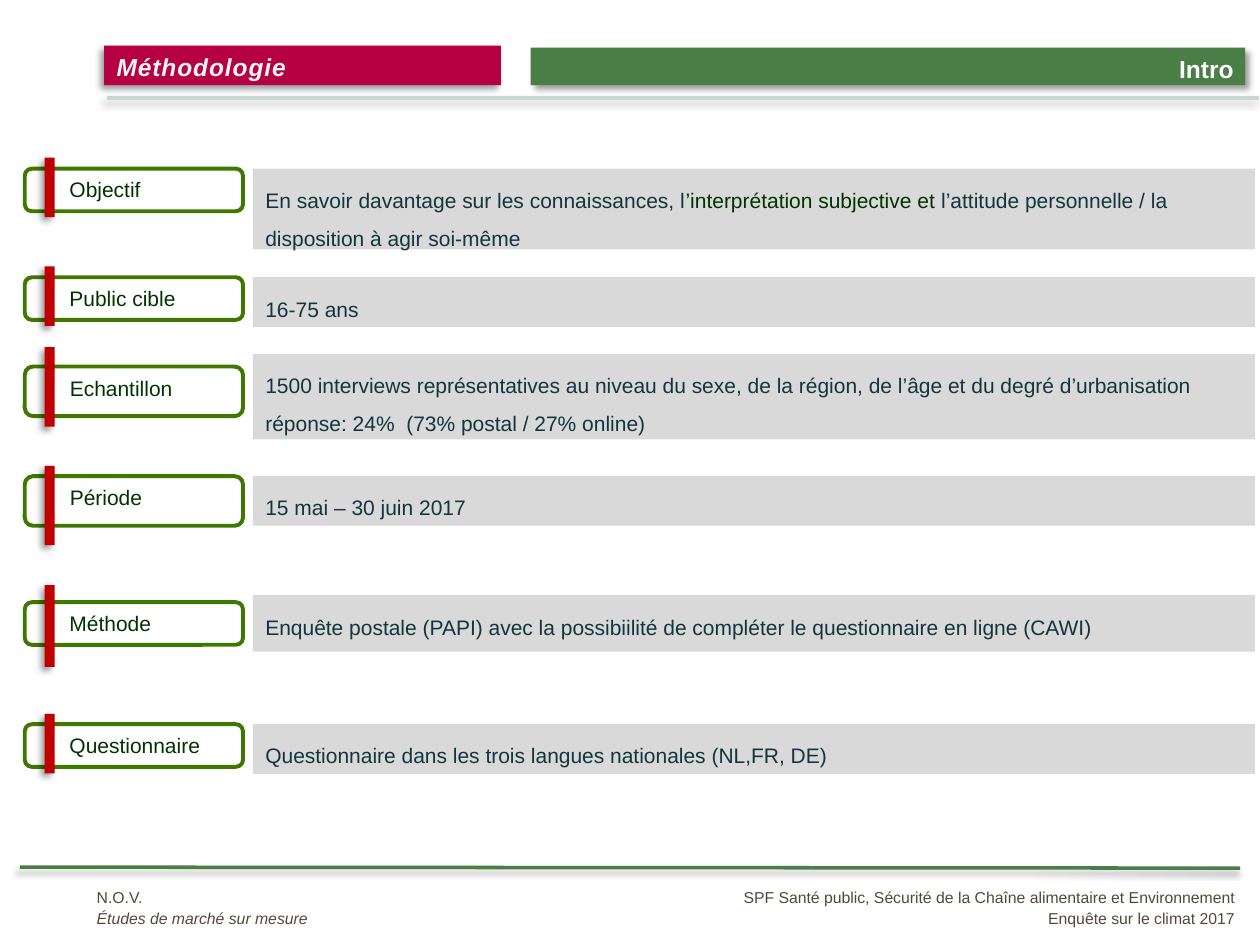
"""Build the methodology slide of a climate survey report."""
from dataclasses import dataclass

from lxml.etree import SubElement
from pptx import Presentation
from pptx.dml.color import RGBColor as RGB
from pptx.enum.shapes import MSO_CONNECTOR as CONN, MSO_SHAPE as SHAPE
from pptx.enum.text import MSO_ANCHOR as ANCHOR, PP_ALIGN as ALIGN
from pptx.oxml.ns import qn
from pptx.util import Cm, Pt


@dataclass(frozen=True)
class Theme:
    font: str = "Arial"
    green: str = "4B7D47"
    pale: str = "CAD6D4"
    crimson: str = "B50042"
    red: str = "C00000"
    border: str = "3E7800"
    grey: str = "D9D9D9"
    white: str = "FFFFFF"
    title: str = "F2F4F3"
    label: str = "003300"
    body: str = "13353D"
    footer: str = "54483A"
    title_size: int = 14
    body_size: int = 12
    footer_size: int = 9


T = Theme()


def finish(s, fill=None, line=None, width=2, angle=None):
    if fill:
        s.fill.solid()
        s.fill.fore_color.rgb = RGB.from_string(fill)
    if line:
        s.line.color.rgb = RGB.from_string(line)
        s.line.width = Pt(width)
    else:
        s.line.fill.background()
    effects = SubElement(s._element.spPr, qn("a:effectLst"))
    if angle:
        shadow = SubElement(effects, qn("a:outerShdw"), blurRad=str(Pt(4)), dist=str(Pt(3)),
                            dir=str(angle * 60000), algn="tl", rotWithShape="0")
        color = SubElement(shadow, qn("a:srgbClr"), val="000000")
        SubElement(color, qn("a:alpha"), val="40000")


def write(s, paragraphs, size, align=ALIGN.LEFT, spacing=1.0, indent=0, bold=False):
    tf = s.text_frame
    tf.word_wrap = True
    tf.vertical_anchor = ANCHOR.TOP
    for i, runs in enumerate(paragraphs):
        p = tf.add_paragraph() if i else tf.paragraphs[0]
        p.alignment = align
        p.line_spacing = spacing
        if indent:
            p._p.get_or_add_pPr().set("marL", str(Cm(indent)))
        for text, color, italic in runs:
            r = p.add_run()
            r.text = text
            r.font.name = T.font
            r.font.size = Pt(size)
            r.font.bold = bold
            r.font.italic = italic
            r.font.color.rgb = RGB.from_string(color)


prs = Presentation()
prs.slide_width, prs.slide_height = Cm(25.4), Cm(19.05)
slide = prs.slides.add_slide(prs.slide_layouts[6])
shapes = slide.shapes

for x1, y1, x2, y2, color in [(0.4, 17.48, 25, 17.5, T.green), (2.16, 1.98, 25.38, 1.98, T.pale)]:
    s = shapes.add_connector(CONN.STRAIGHT, Cm(x1), Cm(y1), Cm(x2), Cm(y2))
    finish(s, line=color, angle=135)

s = shapes.add_shape(SHAPE.RECTANGLE, Cm(10.7), Cm(0.96), Cm(14.4), Cm(0.76))
finish(s, T.green, angle=45)

footers = [
    (11.91, 13.23, ALIGN.RIGHT, False,
     ["SPF Santé public, Sécurité de la Chaîne alimentaire et Environnement",
      "Enquête sur le climat 2017"]),
    (1.7, 7.8, ALIGN.LEFT, True, ["N.O.V.", "Études de marché sur mesure"]),
]
for x, w, align, slanted, lines in footers:
    s = shapes.add_textbox(Cm(x), Cm(17.73), Cm(w), Cm(1.09))
    runs = [[(text, T.footer, slanted and i == 1)] for i, text in enumerate(lines)]
    write(s, runs, T.footer_size, align, 1.1)

rows = [
    ("Objectif", 3.4, 0.86, 3.78, 1.2, 3.4, 1.63,
     [("En savoir davantage sur les connaissances, l", T.body),
      ("’interprétation subjective et ", T.label),
      ("l’attitude personnelle / la disposition à agir soi-même", T.body)]),
    ("Public cible", 5.59, 0.86, 5.97, 1.2, 5.59, 1, [("16-75 ans", T.body)]),
    ("Echantillon", 7.39, 1, 7.8, 1.6, 7.14, 1.72,
     [("1500 interviews représentatives au niveau du sexe, de la région, de l’âge et du degré "
       "d’urbanisation réponse: 24%  (73% postal / 27% online)", T.body)]),
    ("Période", 9.6, 1, 10.19, 1.6, 9.6, 1, [("15 mai – 30 juin 2017", T.body)]),
    ("Méthode", 12.14, 0.86, 12.62, 1.65, 12, 1.14,
     [("Enquête postale (PAPI) avec la possibiilité de compléter le questionnaire "
       "en ligne (CAWI)", T.body)]),
    ("Questionnaire", 14.6, 0.86, 14.99, 1.2, 14.6, 1,
     [("Questionnaire dans les trois langues nationales (NL,FR, DE)", T.body)]),
]
bar_center, bar_width = 1, 0.2
for label, label_y, label_h, bar_y, bar_length, body_y, body_h, parts in rows:
    s = shapes.add_shape(SHAPE.ROUNDED_RECTANGLE, Cm(0.5), Cm(label_y), Cm(4.4), Cm(label_h))
    finish(s, T.white, T.border, 2.25)
    write(s, [[(label, T.label, False)]], T.body_size, indent=0.61)

    s = shapes.add_shape(SHAPE.RECTANGLE, Cm(bar_center - bar_length / 2),
                         Cm(bar_y - bar_width / 2), Cm(bar_length), Cm(bar_width))
    s.rotation = 90
    finish(s, T.red, angle=135)

    s = shapes.add_shape(SHAPE.RECTANGLE, Cm(5.1), Cm(body_y), Cm(20.2), Cm(body_h))
    finish(s, T.grey)
    write(s, [[(text, color, False) for text, color in parts]], T.body_size, spacing=1.5)

s = shapes.add_shape(SHAPE.RECTANGLE, Cm(2.1), Cm(0.92), Cm(8), Cm(0.8))
finish(s, T.crimson, angle=135)
write(s, [[("Méthodologie", T.title, True)]], T.title_size, bold=True)
s.text_frame.paragraphs[0].runs[0].font._element.set("spc", "50")

s = shapes.add_textbox(Cm(19.43), Cm(0.97), Cm(5.69), Cm(0.74))
write(s, [[("Intro", T.white, False)]], T.title_size, ALIGN.RIGHT, bold=True)

prs.save("out.pptx")
